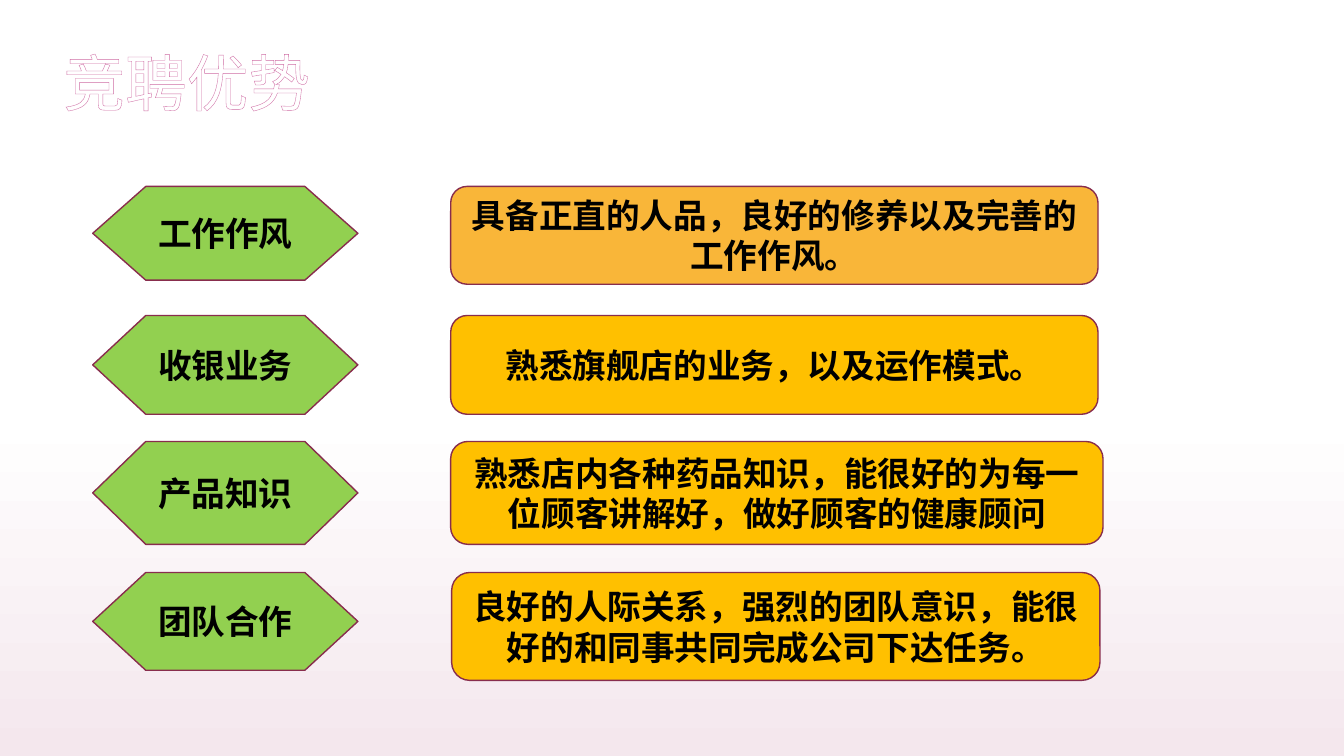
import dataclasses

import lxml.etree
import pptx
import pptx.dml.color
import pptx.enum.shapes
import pptx.enum.text
import pptx.oxml.ns
import pptx.util

Inches, Pt = pptx.util.Inches, pptx.util.Pt
SHAPES = pptx.enum.shapes.MSO_SHAPE
ALIGN = pptx.enum.text.PP_ALIGN
MIDDLE = pptx.enum.text.MSO_ANCHOR.MIDDLE
qn = pptx.oxml.ns.qn


@dataclasses.dataclass(frozen=True)
class Theme:
    white: str = "FFFFFF"
    blush: str = "F4E7ED"
    title_outline: str = "CF6DA4"
    border: str = "882D4D"
    label: str = "92D050"
    amber: str = "F9B639"
    gold: str = "FFC000"
    ink: str = "000000"
    title_font: str = "Arial"
    body_font: str = "Noto Sans CJK SC"
    title_size: int = 44
    body_size: int = 24


THEME = Theme()
LABEL_LEFT, LABEL_WIDTH = 0.92, 2.63

# top, label, label height, detail, detail (left, width, height), detail fill
ADVANTAGES = [
    (1.85, "工作作风", 0.93, "具备正直的人品，良好的修养以及完善的工作作风。",
     (4.47, 6.42, 0.97), THEME.amber),
    (3.13, "收银业务", 0.98, "熟悉旗舰店的业务，以及运作模式。",
     (4.47, 6.42, 0.98), THEME.gold),
    (4.38, "产品知识", 1.02, "熟悉店内各种药品知识，能很好的为每一位顾客讲解好，做好顾客的健康顾问",
     (4.47, 6.47, 1.02), THEME.gold),
    (5.68, "团队合作", 0.97, "良好的人际关系，强烈的团队意识，能很好的和同事共同完成公司下达任务。",
     (4.48, 6.43, 1.07), THEME.gold),
]


def rgb(value):
    return pptx.dml.color.RGBColor.from_string(value)


def style_font(font, family, size, color, bold):
    font.name, font.size, font.bold = family, Pt(size), bold
    font.color.rgb = rgb(color)
    east_asian = lxml.etree.SubElement(font._element, qn("a:ea"))
    east_asian.set("typeface", family)


def outline_text(font, color, width):
    line = lxml.etree.Element(qn("a:ln"), w=str(Pt(width)))
    fill = lxml.etree.SubElement(line, qn("a:solidFill"))
    lxml.etree.SubElement(fill, qn("a:srgbClr"), val=color)
    font._element.insert(0, line)


def paint_background(slide):
    fill = slide.background.fill
    fill.gradient()
    fill.gradient_angle = 270
    for stop, position, color in zip(fill.gradient_stops, (0.55, 1), (THEME.white, THEME.blush)):
        stop.position = position
        stop.color.rgb = rgb(color)


def add_title(slide, text):
    title = slide.shapes.title
    title.left, title.top = Inches(0.53), Inches(0.13)
    title.width, title.height = Inches(11.5), Inches(1.45)
    title.text_frame.text = text
    title.text_frame.vertical_anchor = MIDDLE
    paragraph = title.text_frame.paragraphs[0]
    paragraph.alignment = ALIGN.LEFT
    paragraph.line_spacing = 0.9
    style_font(paragraph.font, THEME.title_font, THEME.title_size, THEME.white, False)
    outline_text(paragraph.runs[0].font, THEME.title_outline, 0.8)


def add_card(slide, preset, box, fill, text):
    card = slide.shapes.add_shape(preset, *map(Inches, box))
    card.shadow.inherit = False
    card.fill.solid()
    card.fill.fore_color.rgb = rgb(fill)
    card.line.color.rgb = rgb(THEME.border)
    card.line.width = Pt(1)
    frame = card.text_frame
    frame.text, frame.word_wrap, frame.vertical_anchor = text, True, MIDDLE
    paragraph = frame.paragraphs[0]
    paragraph.alignment = ALIGN.CENTER
    style_font(paragraph.font, THEME.body_font, THEME.body_size, THEME.ink, True)


def main():
    deck = pptx.Presentation()
    deck.slide_width, deck.slide_height = Inches(13.33), Inches(7.5)
    slide = deck.slides.add_slide(deck.slide_layouts.get_by_name("Title Only"))
    paint_background(slide)
    add_title(slide, "竞聘优势")
    for top, label, label_height, detail, (left, width, height), fill in ADVANTAGES:
        add_card(slide, SHAPES.FLOWCHART_PREPARATION,
                 (LABEL_LEFT, top, LABEL_WIDTH, label_height), THEME.label, label)
        add_card(slide, SHAPES.ROUNDED_RECTANGLE, (left, top, width, height), fill, detail)
    deck.save("out.pptx")


if __name__ == "__main__":
    main()
